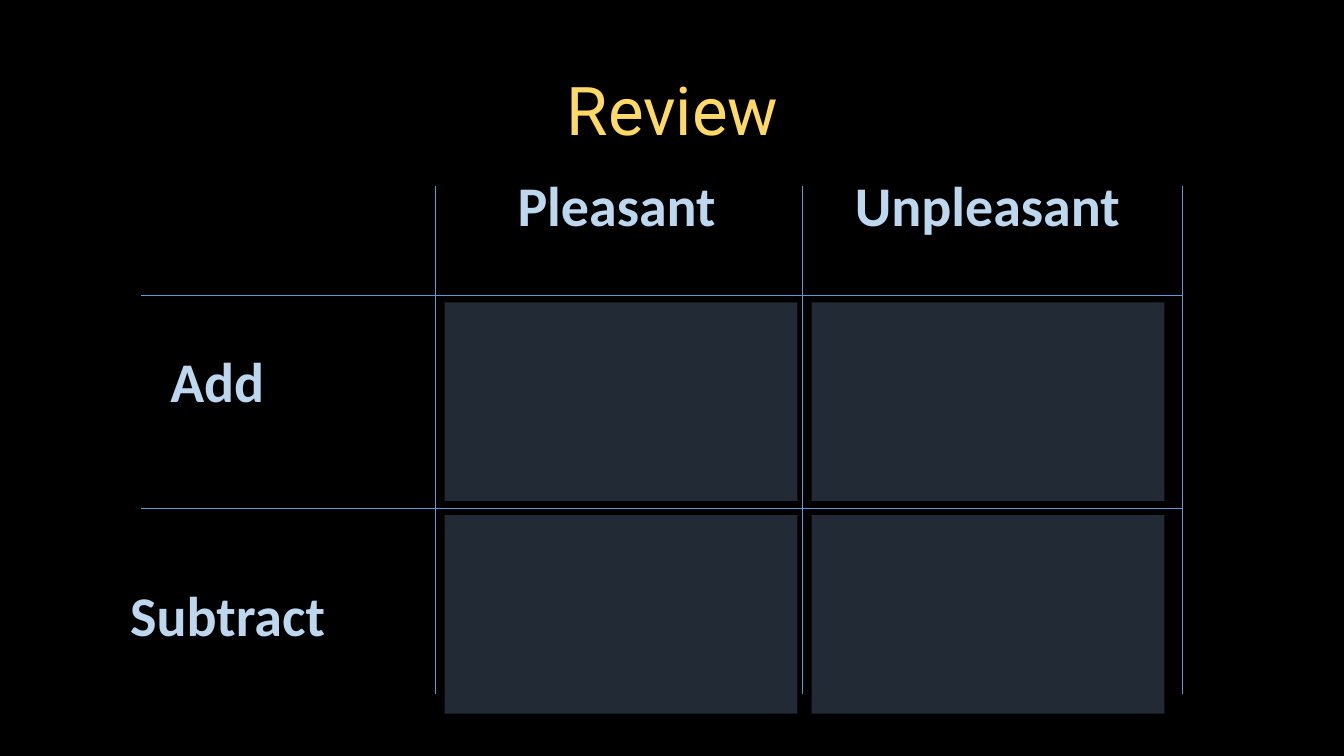
import pptx
import pptx.util
import pptx.dml.color
import pptx.enum.shapes
import pptx.enum.text
import pptx.oxml.ns
from dataclasses import dataclass
from lxml import etree

Inches = pptx.util.Inches
Pt = pptx.util.Pt


@dataclass(frozen=True)
class Theme:
    background: str = "000000"
    title: str = "FFD966"
    heading: str = "BDD7EE"
    rule: str = "5B9BD5"
    panel: str = "222A35"
    title_font: str = "Roboto"
    heading_font: str = "Calibri"
    title_size: int = 48
    heading_size: int = 40
    rule_width: float = 0.5
    title_opacity: int = 60


THEME = Theme()


def rgb(code):
    return pptx.dml.color.RGBColor.from_string(code)


def add_panel(slide, box, color):
    panel = slide.shapes.add_shape(
        pptx.enum.shapes.MSO_SHAPE.RECTANGLE, *map(Inches, box))
    panel.shadow.inherit = False
    panel.fill.solid()
    panel.fill.fore_color.rgb = rgb(color)
    panel.line.fill.background()
    return panel


def write_text(frame, text, color, wrap, font_format):
    frame.word_wrap = wrap
    frame.vertical_anchor = pptx.enum.text.MSO_ANCHOR.MIDDLE
    paragraph = frame.paragraphs[0]
    paragraph.alignment = pptx.enum.text.PP_ALIGN.CENTER
    run = paragraph.add_run()
    run.text = text
    for name, value in font_format.items():
        setattr(run.font, name, value)
    run.font.color.rgb = rgb(color)
    return paragraph


def add_title(slide, box, text):
    banner = add_panel(slide, box, THEME.background)
    # Make the banner fill partly transparent
    color = banner.fill._xPr.find(".//" + pptx.oxml.ns.qn("a:srgbClr"))
    etree.SubElement(color, pptx.oxml.ns.qn("a:alpha"),
                     val=str(THEME.title_opacity * 1000))
    paragraph = write_text(
        banner.text_frame, text, THEME.title, True,
        {"name": THEME.title_font, "size": Pt(THEME.title_size), "bold": False})
    paragraph.line_spacing = 0.9


def add_heading(slide, box, text):
    frame = slide.shapes.add_textbox(*map(Inches, box)).text_frame
    write_text(
        frame, text, THEME.heading, False,
        {"name": THEME.heading_font, "size": Pt(THEME.heading_size), "bold": True})
    frame.auto_size = pptx.enum.text.MSO_AUTO_SIZE.SHAPE_TO_FIT_TEXT


def add_rule(slide, start, end):
    rule = slide.shapes.add_connector(
        pptx.enum.shapes.MSO_CONNECTOR.STRAIGHT, *map(Inches, start + end))
    rule.line.color.rgb = rgb(THEME.rule)
    rule.line.width = Pt(THEME.rule_width)
    etree.SubElement(rule._element.spPr, pptx.oxml.ns.qn("a:effectLst"))


def add_matrix(slide, box):
    left, top, width, height = box
    right, bottom = left + width, top + height
    column_rules = [left + 2.92, left + 6.56, right]
    row_rules = [top + 1.08, top + 3.19]

    # Column and row headings: text, left, top, width
    headings = [
        ("Pleasant", left + 3.62, top - 0.21, 2.19),
        ("Unpleasant ", left + 6.96, top - 0.21, 2.99),
        ("Add", left + 0.18, top + 1.54, 1.15),
        ("Subtract ", left - 0.22, top + 3.86, 2.28),
    ]
    for text, x, y, heading_width in headings:
        add_heading(slide, (x, y, heading_width, 0.77), text)

    # Grid rules
    for x in column_rules:
        add_rule(slide, (x, top), (x, bottom))
    for y in row_rules:
        add_rule(slide, (left, y), (right, y))

    # Answer panels, just inside each grid cell
    for x in column_rules[:2]:
        for y in row_rules:
            add_panel(slide, (x + 0.09, y + 0.07, 3.5, 1.97), THEME.panel)


def main():
    deck = pptx.Presentation()
    deck.slide_width, deck.slide_height = Inches(13.33), Inches(7.5)
    review = deck.slides.add_slide(deck.slide_layouts[6])
    review.background.fill.solid()
    review.background.fill.fore_color.rgb = rgb(THEME.background)
    add_title(review, (0.92, 0.4, 11.5, 1.45), "Review")
    add_matrix(review, (1.4, 1.85, 10.33, 5.04))
    deck.save("out.pptx")


if __name__ == "__main__":
    main()
